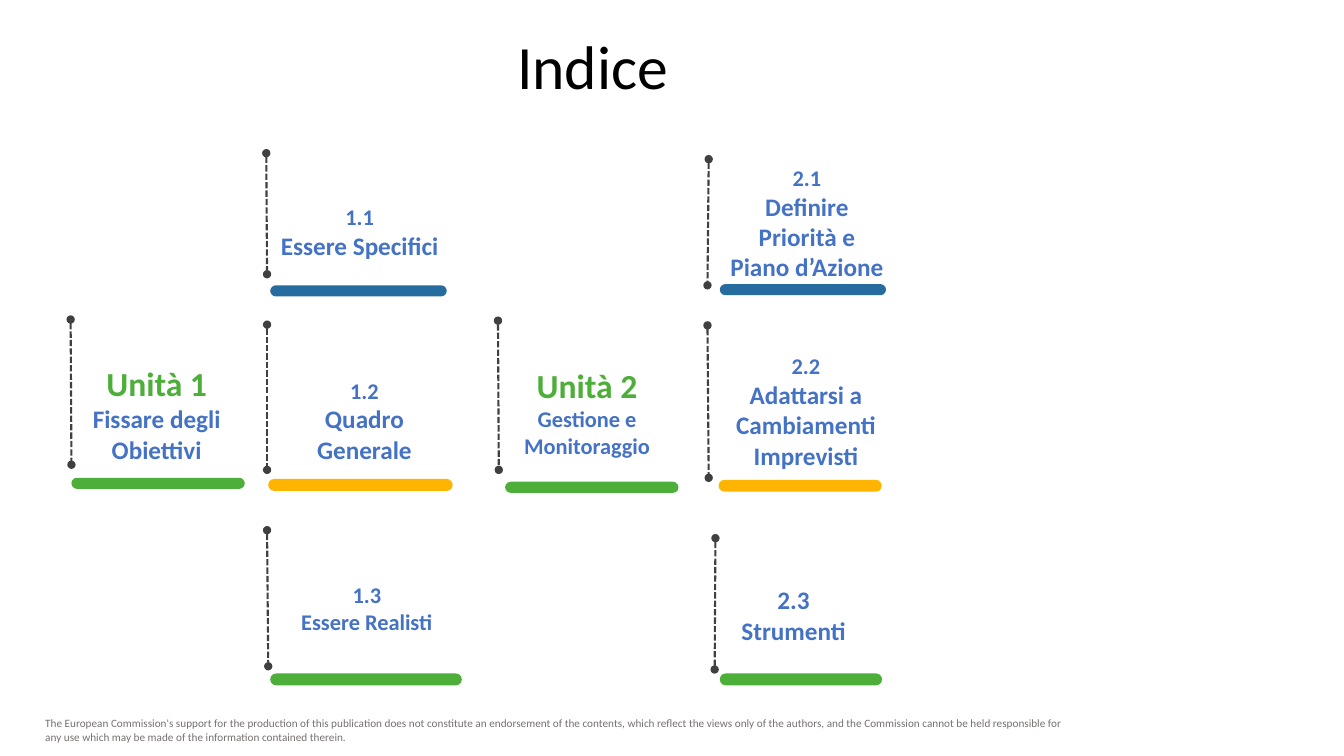
import pptx
import pptx.util
import pptx.dml.color
import pptx.enum.dml
import pptx.enum.shapes
import pptx.enum.text
import lxml.etree

Cm, Pt = pptx.util.Cm, pptx.util.Pt
COLOURS = {"green": "4EAE3A", "blue": "266C9F", "yellow": "FFB500", "text": "4472C4",
           "line": "404040", "footer": "767171", "title": "000000"}


def colour(name):
    return pptx.dml.color.RGBColor.from_string(COLOURS[name])


def write(shape, lines, centred=True, bold=True):
    """Fill a shape with paragraphs given as (text, size, colour name)."""
    frame = shape.text_frame
    frame.word_wrap = True
    frame.text = "\n".join(line[0] for line in lines)
    for para, (_, size, name) in zip(frame.paragraphs, lines):
        if centred:
            para.alignment = pptx.enum.text.PP_ALIGN.CENTER
        for span in para.runs:
            span.font.name = "Calibri"
            span.font.size = Pt(size)
            span.font.bold = bold
            span.font.color.rgb = colour(name)


deck = pptx.Presentation()
deck.slide_width, deck.slide_height = Cm(33.87), Cm(19.05)
page = deck.slides.add_slide(deck.slide_layouts[5])

# Title
title = page.shapes.title
title.left, title.top, title.width, title.height = Cm(6.02), Cm(0.66), Cm(17.83), Cm(2.18)
write(title, [("Indice", 44, "title")], bold=False)
title.text_frame.vertical_anchor = pptx.enum.text.MSO_ANCHOR.MIDDLE
title.text_frame.paragraphs[0].line_spacing = 0.9

# Footer
footer = page.shapes.add_textbox(Cm(0.89), Cm(17.93), Cm(26.57), Cm(0.94))
write(footer, [("The European Commission's support for the production of this publication does not "
                "constitute an endorsement of the contents, which reflect the views only of the "
                "authors, and the Commission cannot be held responsible for any use which may be "
                "made of the information contained therein.", 8, "footer")],
      centred=False, bold=False)

# Index entries: number, name, sizes, bar colour, bar, dashed line ends, text box (cm)
entries = [
    ("Unità 1", "Fissare degli Obiettivi", 24, 18, "green",
     (1.8, 12.04, 4.37, 0.28), (1.78, 8.05, 1.8, 11.71), (1.78, 9.03, 4.34, 2.81)),
    ("1.1", "Essere Specifici", 16, 18, "blue",
     (6.81, 7.19, 4.45, 0.28), (6.71, 3.86, 6.73, 6.91), (6.73, 5, 4.67, 1.7)),
    ("1.2", "Quadro Generale", 16, 18, "yellow",
     (6.76, 12.07, 4.65, 0.3), (6.73, 8.18, 6.73, 11.84), (7.14, 9.37, 4.09, 2.49)),
    ("1.3", "Essere Realisti", 16, 16, "green",
     (6.81, 16.97, 4.83, 0.3), (6.73, 13.36, 6.76, 16.79), (7.11, 14.53, 4.27, 1.63)),
    ("Unità 2", "Gestione e Monitoraggio", 24, 16, "green",
     (12.73, 12.14, 4.37, 0.28), (12.55, 8.08, 12.57, 11.84), (12.75, 9.07, 4.09, 2.64)),
    ("2.1", "Definire Priorità e Piano d’Azione", 16, 18, "blue",
     (18.14, 7.16, 4.19, 0.28), (17.86, 4.01, 17.83, 7.19), (18.11, 4.01, 4.45, 3.25)),
    ("2.2", "Adattarsi a Cambiamenti Imprevisti", 16, 18, "yellow",
     (18.11, 12.09, 4.11, 0.3), (17.83, 8.2, 17.86, 12.04), (18.14, 8.76, 4.34, 3.25)),
    ("2.3", "Strumenti", 18, 18, "green",
     (18.14, 16.97, 4.09, 0.3), (18.03, 13.56, 18.01, 16.87), (18.03, 14.61, 3.94, 2.39)),
]

for number, name, number_size, name_size, bar_colour, bar_place, line_ends, text_place in entries:
    # Rounded bar below the entry
    bar = page.shapes.add_shape(pptx.enum.shapes.MSO_SHAPE.ROUNDED_RECTANGLE, *map(Cm, bar_place))
    bar.adjustments[0] = 0.5
    bar.shadow.inherit = False
    bar.fill.solid()
    bar.fill.fore_color.rgb = colour(bar_colour)
    bar.line.fill.background()

    # Dashed line with round ends
    dashes = page.shapes.add_connector(pptx.enum.shapes.MSO_CONNECTOR.STRAIGHT, *map(Cm, line_ends))
    dashes.line.color.rgb = colour("line")
    dashes.line.width = Pt(1.5)
    dashes.line.dash_style = pptx.enum.dml.MSO_LINE.SQUARE_DOT
    outline = dashes.line._get_or_add_ln()
    for end in ("a:headEnd", "a:tailEnd"):
        lxml.etree.SubElement(outline, pptx.oxml.ns.qn(end), type="oval")
    lxml.etree.SubElement(dashes._element.spPr, pptx.oxml.ns.qn("a:effectLst"))

    # Number and name
    label = page.shapes.add_textbox(*map(Cm, text_place))
    number_colour = "green" if number.startswith("Unità") else "text"
    write(label, [(number, number_size, number_colour), (name, name_size, "text")])

deck.save("out.pptx")
